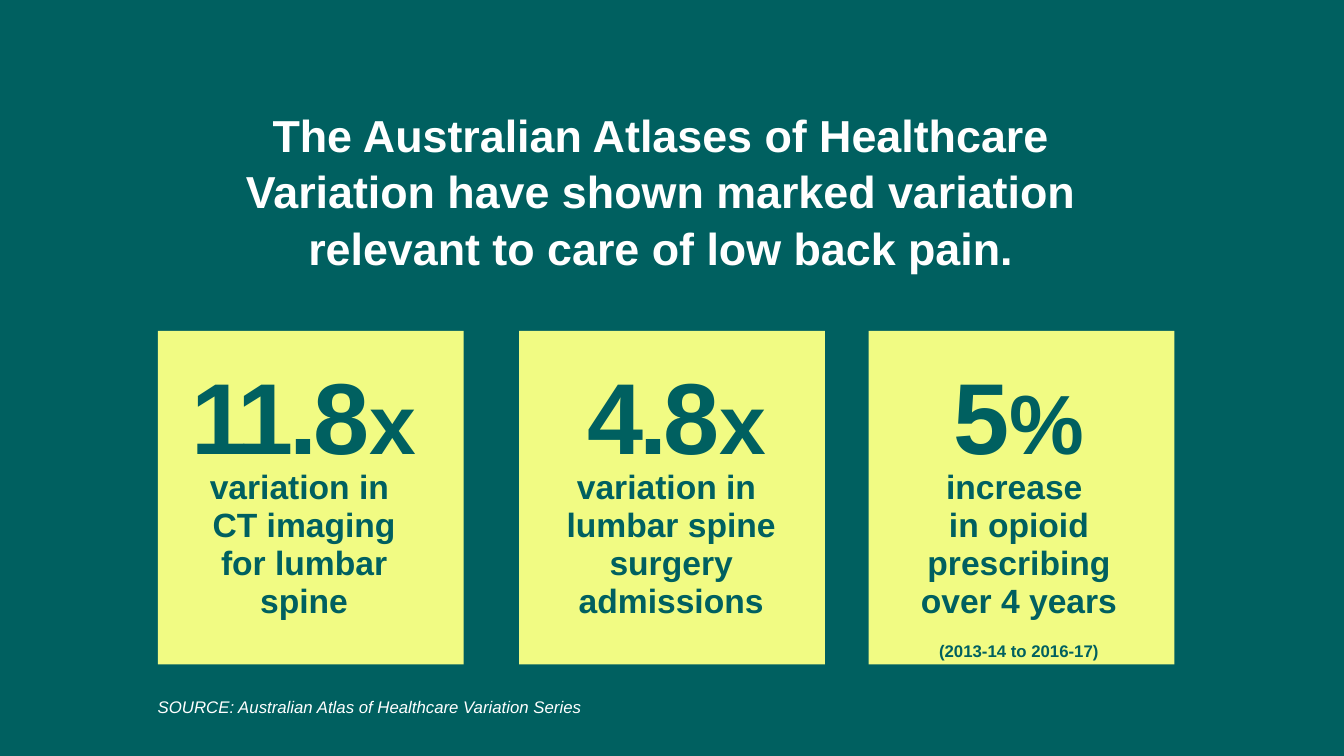
import pptx
import pptx.util
import pptx.dml.color
import pptx.enum.shapes
import pptx.enum.text

COLORS = {"teal": "006060", "lime": "F1FB83", "white": "FFFFFF"}
FONT = "Arial"
COLS, ROWS = 16, 9
CARD_TOP, CARD_W, CARD_H = 3.94, 3.64, 3.97
FIGURE_TOP, FIGURE_W = 4.31, 3.85
CAPTION_TOP, TEXT_H = 5.53, 1.52

# card left, figure left, caption left, caption width, figure, unit, caption, note
CARDS = [
    (1.88, 1.69, 2.22, 2.8, "11.8", "x",
     "variation in \vCT imaging for lumbar spine", None),
    (6.18, 6.13, 6.35, 3.28, "4.8", "x",
     "variation in \vlumbar spine surgery admissions", None),
    (10.34, 10.2, 10.73, 2.8, "5", "%",
     "increase \vin opioid prescribing over 4 years", "(2013-14 to 2016-17)"),
]


def rgb(name):
    return pptx.dml.color.RGBColor.from_string(COLORS[name])


class Deck:
    def __init__(self):
        self.prs = pptx.Presentation()
        self.prs.slide_width = pptx.util.Inches(13.33)
        self.prs.slide_height = pptx.util.Inches(7.5)

    def add_slide(self, background):
        self.s = self.prs.slides.add_slide(self.prs.slide_layouts[5])
        fill = self.s.background.fill
        fill.solid()
        fill.fore_color.rgb = rgb(background)

    def box(self, left, top, width, height):
        """Turn grid columns and rows into slide lengths."""
        col, row = self.prs.slide_width / COLS, self.prs.slide_height / ROWS
        return [round(v) for v in (left * col, top * row, width * col, height * row)]

    def frame(self, sp):
        tf = sp.text_frame
        tf.word_wrap = True
        tf.auto_size = pptx.enum.text.MSO_AUTO_SIZE.NONE
        tf.vertical_anchor = pptx.enum.text.MSO_ANCHOR.TOP
        return tf

    def runs(self, p, pieces, color, align="CENTER", spacing=None,
             bold=True, italic=False, tracking=None):
        """Fill a paragraph with (text, size) runs."""
        p.alignment = getattr(pptx.enum.text.PP_ALIGN, align)
        p.line_spacing = spacing
        for text, size in pieces:
            for i, line in enumerate(text.split("\v")):
                if i:
                    p.add_line_break()
                r = p.add_run()
                r.text = line
                r.font.name = FONT
                r.font.size = pptx.util.Pt(size)
                r.font.bold = bold
                r.font.italic = italic
                r.font.color.rgb = rgb(color)
                if tracking:
                    r.font._element.set("spc", str(tracking * 100))

    def title(self, text, size, *place):
        sp = self.s.shapes.title
        sp.left, sp.top, sp.width, sp.height = self.box(*place)
        self.runs(self.frame(sp).paragraphs[0], [(text, size)], "white", spacing=1.05)

    def panel(self, color, *place):
        sp = self.s.shapes.add_shape(
            pptx.enum.shapes.MSO_SHAPE.RECTANGLE, *self.box(*place))
        sp.shadow.inherit = False
        sp.fill.solid()
        sp.fill.fore_color.rgb = rgb(color)
        sp.line.fill.background()

    def text(self, pieces, color, *place, **style):
        tf = self.frame(self.s.shapes.add_textbox(*self.box(*place)))
        self.runs(tf.paragraphs[0], pieces, color, **style)
        return tf

    def card(self, left, figure_left, caption_left, caption_w,
             figure, unit, caption, note):
        self.panel("lime", left, CARD_TOP, CARD_W, CARD_H)
        self.text([(figure, 72), (unit, 60)], "teal", figure_left, FIGURE_TOP,
                  FIGURE_W, TEXT_H, spacing=0.9, tracking=-3)
        tf = self.text([(caption, 24)], "teal", caption_left, CAPTION_TOP,
                       caption_w, TEXT_H, spacing=0.94)
        if note:
            p = tf.add_paragraph()
            p.space_before = pptx.util.Pt(15)
            self.runs(p, [(note, 12)], "teal", spacing=0.94)


def main():
    deck = Deck()
    deck.add_slide("teal")
    deck.title("The Australian Atlases of Healthcare Variation have shown marked "
               "variation relevant to care of low back pain.", 32,
               2.22, 1.19, 11.3, 2.46)
    for card in CARDS:
        deck.card(*card)
    deck.text([("SOURCE: Australian Atlas of Healthcare Variation Series", 12)],
              "white", 1.76, 8.24, 12.1, 0.36,
              align="LEFT", bold=False, italic=True)
    deck.prs.save("out.pptx")


if __name__ == "__main__":
    main()
